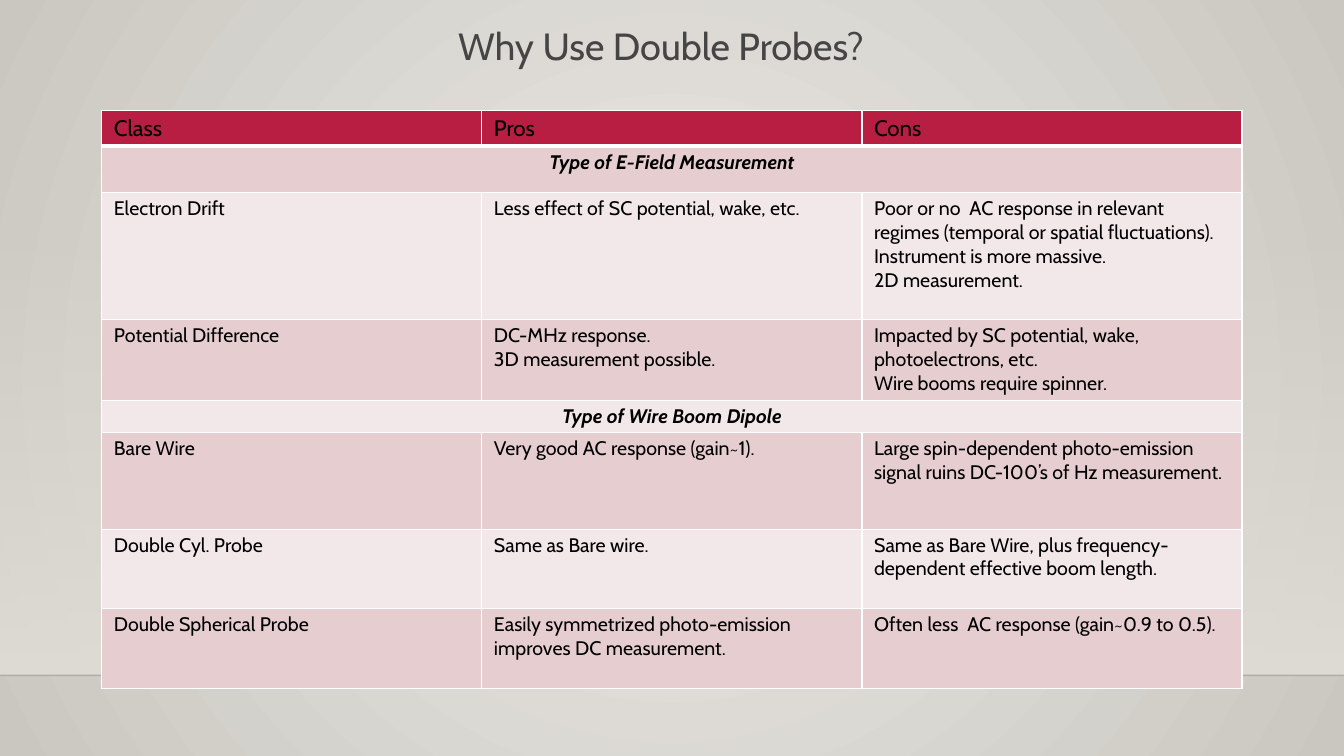
from dataclasses import dataclass

from lxml import etree
from pptx import Presentation
from pptx.dml.color import RGBColor
from pptx.enum.shapes import MSO_CONNECTOR, MSO_SHAPE
from pptx.enum.text import MSO_ANCHOR, PP_ALIGN
from pptx.oxml.ns import qn
from pptx.util import Inches, Pt

STRAIGHT = MSO_CONNECTOR.STRAIGHT
RECTANGLE = MSO_SHAPE.RECTANGLE
MIDDLE = MSO_ANCHOR.MIDDLE
CENTER, LEFT = PP_ALIGN.CENTER, PP_ALIGN.LEFT


@dataclass(frozen=True)
class Theme:
    font: str = "Cabin"
    title_size: float = 27
    header_size: float = 16
    body_size: float = 14
    title: str = "454545"
    text: str = "000000"
    header: str = "B71E42"
    bands: tuple = ("E6CDCF", "F3E8E9")
    border: str = "FFFFFF"
    backdrop: tuple = ("ECEAE7", "CAC7C1")
    wall: str = "DFDBD5"
    floor_line: str = "000001"


THEME = Theme()
SLIDE_WIDTH, SLIDE_HEIGHT = 13.33, 7.5
FLOOR_TOP = 6.7
COLUMN_WIDTH = 3.77
HEADER = ("Class", "Pros", "Cons")
# Row height and cell texts; a row with a single text spans the table.
ROWS = [
    (0.35, HEADER),
    (0.46, ("Type of E-Field Measurement",)),
    (1.26, ("Electron Drift", "Less effect of SC potential, wake, etc.",
            "Poor or no  AC response in relevant regimes (temporal or spatial fluctuations).\n"
            "Instrument is more massive.\n2D measurement.")),
    (0.8, ("Potential Difference", "DC-MHz response.\n3D measurement possible.",
           "Impacted by SC potential, wake, photoelectrons, etc.\nWire booms require spinner.")),
    (0.32, ("Type of Wire Boom Dipole",)),
    (0.96, ("Bare Wire", "Very good AC response (gain~1).",
            "Large spin-dependent photo-emission signal ruins DC-100’s of Hz measurement.")),
    (0.79, ("Double Cyl. Probe", "Same as Bare wire.",
            "Same as Bare Wire, plus frequency-dependent effective boom length.")),
    (0.79, ("Double Spherical Probe",
            "Easily symmetrized photo-emission improves DC measurement.",
            "Often less  AC response (gain~0.9 to 0.5).")),
]


def rgb(value):
    return RGBColor.from_string(value)


def set_attributes(target, values):
    for name, value in values.items():
        setattr(target, name, value)


def write(frame, text, size, color, align=LEFT, emphasis=False):
    frame.text = text
    for paragraph in frame.paragraphs:
        paragraph.alignment = align
        set_attributes(paragraph.font, {"name": THEME.font, "size": Pt(size),
                                        "bold": emphasis, "italic": emphasis})
        paragraph.font.color.rgb = rgb(color)


def set_alpha(color_element, percent):
    etree.SubElement(color_element, qn("a:alpha"), val=str(percent * 1000))


def set_gradient(fill, colors):
    fill.gradient()
    for stop, color, position in zip(fill.gradient_stops, colors, (0, 1)):
        stop.color.rgb = rgb(color)
        stop.position = position


def add_backdrop(slide):
    """Radial background, a wall that fades in downwards, and the floor line."""
    set_gradient(slide.background.fill, THEME.backdrop)
    gradient = slide.element.find(".//" + qn("a:gradFill"))
    gradient.remove(gradient.find(qn("a:lin")))
    radial = etree.SubElement(gradient, qn("a:path"), path="circle")
    etree.SubElement(radial, qn("a:fillToRect"),
                     {side: "50000" for side in "ltrb"})

    wall_top = 2.21
    wall = slide.shapes.add_shape(RECTANGLE, 0, Inches(wall_top), Inches(SLIDE_WIDTH),
                                  Inches(FLOOR_TOP - wall_top))
    wall.shadow.inherit = False
    wall.line.fill.background()
    set_gradient(wall.fill, (THEME.wall, THEME.wall))
    wall.fill.gradient_angle = 270
    set_alpha(wall.element.find(".//" + qn("a:gs"))[0], 0)

    floor = slide.shapes.add_connector(STRAIGHT, 0, Inches(FLOOR_TOP),
                                       Inches(SLIDE_WIDTH), Inches(FLOOR_TOP))
    floor.line.width = Pt(1)
    floor.line.color.rgb = rgb(THEME.floor_line)
    set_alpha(floor.element.find(".//" + qn("a:srgbClr")), 20)
    etree.SubElement(floor.element.spPr, qn("a:effectLst"))


def add_title(slide, text):
    title = slide.shapes.add_textbox(Inches(3.33), Inches(0.22), Inches(6.45), Inches(0.47))
    set_attributes(title.text_frame, {
        "word_wrap": True, "vertical_anchor": MIDDLE,
        "margin_left": Inches(0.11), "margin_right": Inches(0.11),
        "margin_top": Inches(0.06), "margin_bottom": Inches(0.06)})
    write(title.text_frame, text, THEME.title_size, THEME.title, CENTER)


def set_borders(cell, bottom_width):
    properties = cell._tc.get_or_add_tcPr()
    widths = {"lnL": 1, "lnR": 1, "lnT": 1, "lnB": bottom_width}
    for index, (side, width) in enumerate(widths.items()):
        line = etree.Element(qn("a:" + side), w=str(Pt(width)))
        fill = etree.SubElement(line, qn("a:solidFill"))
        etree.SubElement(fill, qn("a:srgbClr"), val=THEME.border)
        properties.insert(index, line)


def style_cell(cell, color, bottom_width):
    set_attributes(cell, {"margin_left": Inches(0.12), "margin_right": Inches(0.12),
                          "margin_top": Inches(0.04), "margin_bottom": Inches(0.04)})
    cell.fill.solid()
    cell.fill.fore_color.rgb = rgb(color)
    set_borders(cell, bottom_width)


def add_comparison(slide):
    total_height = sum(height for height, _ in ROWS)
    table = slide.shapes.add_table(
        len(ROWS), len(HEADER), Inches(1.01), Inches(1.1),
        Inches(COLUMN_WIDTH * len(HEADER)), Inches(total_height)).table
    set_attributes(table, {"first_row": False, "horz_banding": False})
    for column in table.columns:
        column.width = Inches(COLUMN_WIDTH)
    for row, (height, texts) in enumerate(ROWS):
        table.rows[row].height = Inches(height)
        is_header, is_section = row == 0, len(texts) == 1
        color = THEME.header if is_header else THEME.bands[(row - 1) % 2]
        size = THEME.header_size if is_header else THEME.body_size
        for cell in table.rows[row].cells:
            style_cell(cell, color, 3 if is_header else 1)
        if is_section:
            table.cell(row, 0).merge(table.cell(row, len(HEADER) - 1))
        for column, text in enumerate(texts):
            write(table.cell(row, column).text_frame, text, size, THEME.text,
                  CENTER if is_section else LEFT, is_section)


def main():
    deck = Presentation()
    deck.slide_width, deck.slide_height = Inches(SLIDE_WIDTH), Inches(SLIDE_HEIGHT)
    slide = deck.slides.add_slide(deck.slide_layouts[6])
    add_backdrop(slide)
    add_title(slide, "Why Use Double Probes?")
    add_comparison(slide)
    deck.save("out.pptx")


if __name__ == "__main__":
    main()
